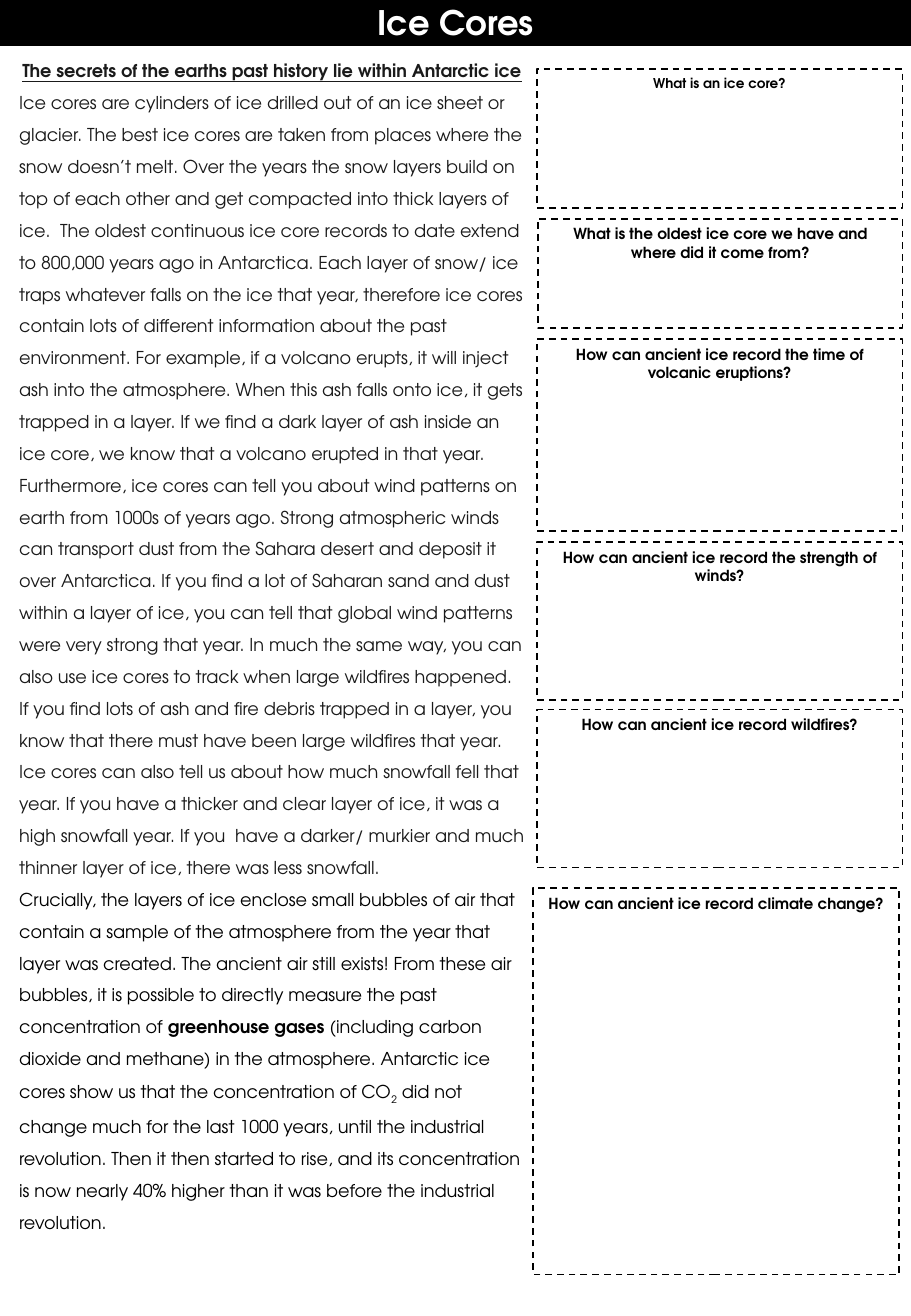
from dataclasses import dataclass

from pptx import Presentation
from pptx.dml.color import RGBColor
from pptx.enum.dml import MSO_LINE
from pptx.enum.shapes import MSO_SHAPE
from pptx.enum.text import MSO_ANCHOR, MSO_AUTO_SIZE, PP_ALIGN
from pptx.util import Inches, Pt


@dataclass(frozen=True)
class Theme:
    face: str = "TeX Gyre Adventor"
    black: RGBColor = RGBColor(0, 0, 0)
    charcoal: RGBColor = RGBColor(0x1A, 0x1A, 0x1A)
    white: RGBColor = RGBColor(255, 255, 255)
    title_size: float = 20
    article_size: float = 10.5
    question_size: float = 9
    small_question_size: float = 8
    article_spacing: float = 1.5
    border: float = 1


THEME = Theme()
PAGE_WIDTH, PAGE_HEIGHT = 7.5, 10.83
BANNER_HEIGHT = 0.37
TITLE = "Ice Cores"
HEADING = "The secrets of the earths past history lie within Antarctic ice"

STORY = [
    "Ice cores are cylinders of ice drilled out of an ice sheet or glacier. The best ice cores are "
    "taken from places where the snow doesn’t melt. Over the years the snow layers build on top of "
    "each other and get compacted into thick layers of ice.  The oldest continuous ice core records "
    "to date extend to 800,000 years ago in Antarctica. Each layer of snow/ ice traps whatever falls "
    "on the ice that year, therefore ice cores contain lots of different information about the past "
    "environment. For example, if a volcano erupts, it will inject ash into the atmosphere. When this "
    "ash falls onto ice, it gets trapped in a layer. If we find a dark layer of ash inside an ice "
    "core, we know that a volcano erupted in that year.",
    "Furthermore, ice cores can tell you about wind patterns on earth from 1000s of years ago. Strong "
    "atmospheric winds can transport dust from the Sahara desert and deposit it over Antarctica. If "
    "you find a lot of Saharan sand and dust within a layer of ice, you can tell that global wind "
    "patterns were very strong that year. In much the same way, you can also use ice cores to track "
    "when large wildfires happened. If you find lots of ash and fire debris trapped in a layer, you "
    "know that there must have been large wildfires that year.",
    "Ice cores can also tell us about how much snowfall fell that year. If you have a thicker and "
    "clear layer of ice, it was a high snowfall year. If you  have a darker/ murkier and much thinner "
    "layer of ice, there was less snowfall.",
]

CLIMATE = [
    ("Crucially, the layers of ice enclose small bubbles of air that contain a sample of the "
     "atmosphere from the year that layer was created. The ancient air still exists! From these air "
     "bubbles, it is possible to directly measure the past concentration of ", "plain"),
    ("greenhouse gases ", "bold"),
    ("(including carbon dioxide and methane) in the atmosphere. Antarctic ice cores show us that the "
     "concentration of CO", "plain"),
    ("2", "subscript"),
    (" did not change much for the last 1000 years, until the industrial revolution. Then it then "
     "started to rise, and its concentration is now nearly 40% higher than it was before the "
     "industrial revolution.", "plain"),
]

QUESTIONS = [
    ("What is an ice core?", 4.42, 0.57, 3.01, 1.14, THEME.small_question_size),
    ("What is the oldest ice core we have and where did it come from?",
     4.43, 1.8, 3, 0.9, THEME.question_size),
    ("How can ancient ice record the time of volcanic eruptions?",
     4.42, 2.79, 3.01, 1.58, THEME.question_size),
    ("How can ancient ice record the strength of winds?",
     4.42, 4.46, 3.01, 1.3, THEME.question_size),
    ("How can ancient ice record wildfires?", 4.42, 5.84, 3.01, 1.3, THEME.question_size),
    ("How can ancient ice record climate change?",
     4.39, 7.31, 3.01, 3.18, THEME.question_size),
]


def style(paragraph, size, color, bold=None, align=PP_ALIGN.LEFT, spacing=1.0):
    paragraph.alignment = align
    paragraph.line_spacing = spacing
    font = paragraph.font
    font.name = THEME.face
    font.size = Pt(size)
    font.color.rgb = color
    font.bold = bold


def paint(panel, fill):
    panel.fill.solid()
    panel.fill.fore_color.rgb = fill
    panel.line.color.rgb = THEME.black
    panel.line.width = Pt(THEME.border)


def add_banner(slide):
    banner = slide.shapes.title
    banner.left, banner.top = Inches(0), Inches(0)
    banner.width, banner.height = Inches(PAGE_WIDTH), Inches(BANNER_HEIGHT)
    paint(banner, THEME.black)
    frame = banner.text_frame
    frame.text = TITLE
    frame.auto_size = MSO_AUTO_SIZE.NONE
    frame.vertical_anchor = MSO_ANCHOR.MIDDLE
    style(frame.paragraphs[0], THEME.title_size, THEME.white, True, PP_ALIGN.CENTER)


def add_article(slide):
    article = slide.shapes.add_textbox(
        Inches(0.06), Inches(0.36), Inches(4.36), Inches(10.87))
    frame = article.text_frame
    frame.word_wrap = True
    frame.auto_size = MSO_AUTO_SIZE.SHAPE_TO_FIT_TEXT
    heading = frame.paragraphs[0]
    heading.text = HEADING
    style(heading, THEME.article_size, THEME.charcoal, True, PP_ALIGN.CENTER,
          THEME.article_spacing)
    heading.font.underline = True
    for passage in STORY:
        paragraph = frame.add_paragraph()
        paragraph.text = passage
        style(paragraph, THEME.article_size, THEME.charcoal, spacing=THEME.article_spacing)
    climate = frame.add_paragraph()
    style(climate, THEME.article_size, THEME.black, spacing=THEME.article_spacing)
    for words, emphasis in CLIMATE:
        run = climate.add_run()
        run.text = words
        if emphasis == "bold":
            run.font.bold = True
        elif emphasis == "subscript":
            run._r.get_or_add_rPr().set("baseline", "-25000")


def add_question(slide, question, left, top, width, height, size):
    answer_box = slide.shapes.add_shape(
        MSO_SHAPE.RECTANGLE, Inches(left), Inches(top), Inches(width), Inches(height))
    answer_box.shadow.inherit = False
    paint(answer_box, THEME.white)
    answer_box.line.dash_style = MSO_LINE.DASH
    frame = answer_box.text_frame
    frame.word_wrap = True
    frame.vertical_anchor = MSO_ANCHOR.TOP
    frame.text = question
    style(frame.paragraphs[0], size, THEME.black, True, PP_ALIGN.CENTER)


def main():
    presentation = Presentation()
    presentation.slide_width = Inches(PAGE_WIDTH)
    presentation.slide_height = Inches(PAGE_HEIGHT)
    slide = presentation.slides.add_slide(presentation.slide_layouts.get_by_name("Title Only"))
    add_banner(slide)
    add_article(slide)
    for entry in QUESTIONS:
        add_question(slide, *entry)
    presentation.save("out.pptx")


if __name__ == "__main__":
    main()
